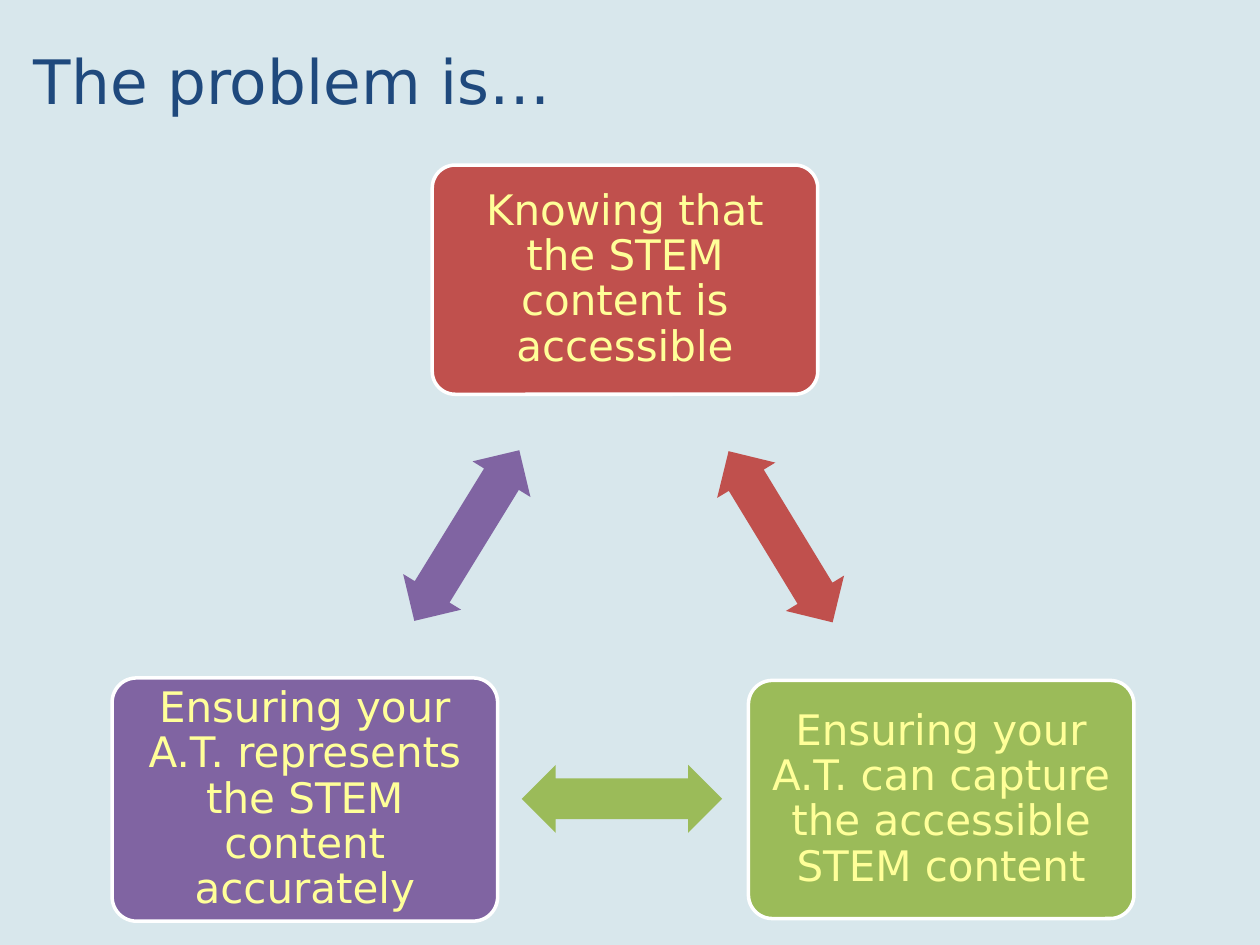
from pptx import Presentation
from pptx.dml.color import RGBColor
from pptx.enum.shapes import MSO_SHAPE
from pptx.enum.text import MSO_ANCHOR, PP_ALIGN
from pptx.util import Pt

COLORS = {
    "background": "D8E7EC",
    "title": "1F497D",
    "text": "FFFF99",
    "outline": "FFFFFF",
    "red": "C0504D",
    "green": "9BBB59",
    "purple": "8064A2",
}
FONT = "DejaVu Sans"
BOX_WIDTH = 220.3
ARROW_WIDTH, ARROW_HEIGHT = 114.5, 38.9


def add_filled_shape(kind, left, top, width, height, color, adjustments):
    shape = slide.shapes.add_shape(kind, Pt(left), Pt(top), Pt(width), Pt(height))
    shape.shadow.inherit = False
    shape.fill.solid()
    shape.fill.fore_color.rgb = RGBColor.from_string(COLORS[color])
    for index, value in enumerate(adjustments):
        shape.adjustments[index] = value
    return shape


def write_text(shape, text, size, color, frame_format, paragraph_format):
    frame = shape.text_frame
    for name, value in frame_format.items():
        setattr(frame, name, value)
    paragraph = frame.paragraphs[0]
    for name, value in paragraph_format.items():
        setattr(paragraph, name, value)
    run = paragraph.add_run()
    run.text = text
    for name, value in {"name": FONT, "size": Pt(size)}.items():
        setattr(run.font, name, value)
    run.font.color.rgb = RGBColor.from_string(COLORS[color])


presentation = Presentation()
presentation.slide_width = Pt(720)
presentation.slide_height = Pt(540)
slide = presentation.slides.add_slide(presentation.slide_layouts[6])
slide.background.fill.solid()
slide.background.fill.fore_color.rgb = RGBColor.from_string(COLORS["background"])

# Cycle: each box with the arrow that leads on to the next one
box_frame = {"word_wrap": True, "vertical_anchor": MSO_ANCHOR.MIDDLE}
for side in ("left", "top", "right", "bottom"):
    box_frame[f"margin_{side}"] = Pt(7.2)
box_paragraph = {"alignment": PP_ALIGN.CENTER, "line_spacing": 0.9}

# color, text, box (left, top, height), arrow (left, top, rotation)
steps = [
    ("red", "Knowing that the STEM content is accessible",
     (247, 94.3, 131), (388.8, 287.3, 58.7)),
    ("green", "Ensuring your A.T. can capture the accessible STEM content",
     (427.7, 388.8, 136.1), (298.1, 437, 180)),
    ("purple", "Ensuring your A.T. represents the STEM content accurately",
     (64.1, 387.4, 139), (209.5, 286.6, 301.6)),
]
for color, text, (left, top, height), (arrow_left, arrow_top, rotation) in steps:
    box = add_filled_shape(MSO_SHAPE.ROUNDED_RECTANGLE, left, top,
                           BOX_WIDTH, height, color, [0.1])
    box.line.width = Pt(2)
    box.line.color.rgb = RGBColor.from_string(COLORS["outline"])
    write_text(box, text, 24, "text", box_frame, box_paragraph)

    arrow = add_filled_shape(MSO_SHAPE.LEFT_RIGHT_ARROW, arrow_left, arrow_top,
                             ARROW_WIDTH, ARROW_HEIGHT, color, [0.6, 0.5])
    arrow.rotation = rotation
    arrow.line.fill.background()

# Title
title = slide.shapes.add_textbox(Pt(19.4), Pt(19.4), Pt(488.2), Pt(51.1))
title_frame = {"word_wrap": True, "vertical_anchor": MSO_ANCHOR.BOTTOM,
               "margin_left": Pt(0)}
write_text(title, "The problem is…", 35, "title", title_frame,
           {"alignment": PP_ALIGN.LEFT})

presentation.save("out.pptx")
